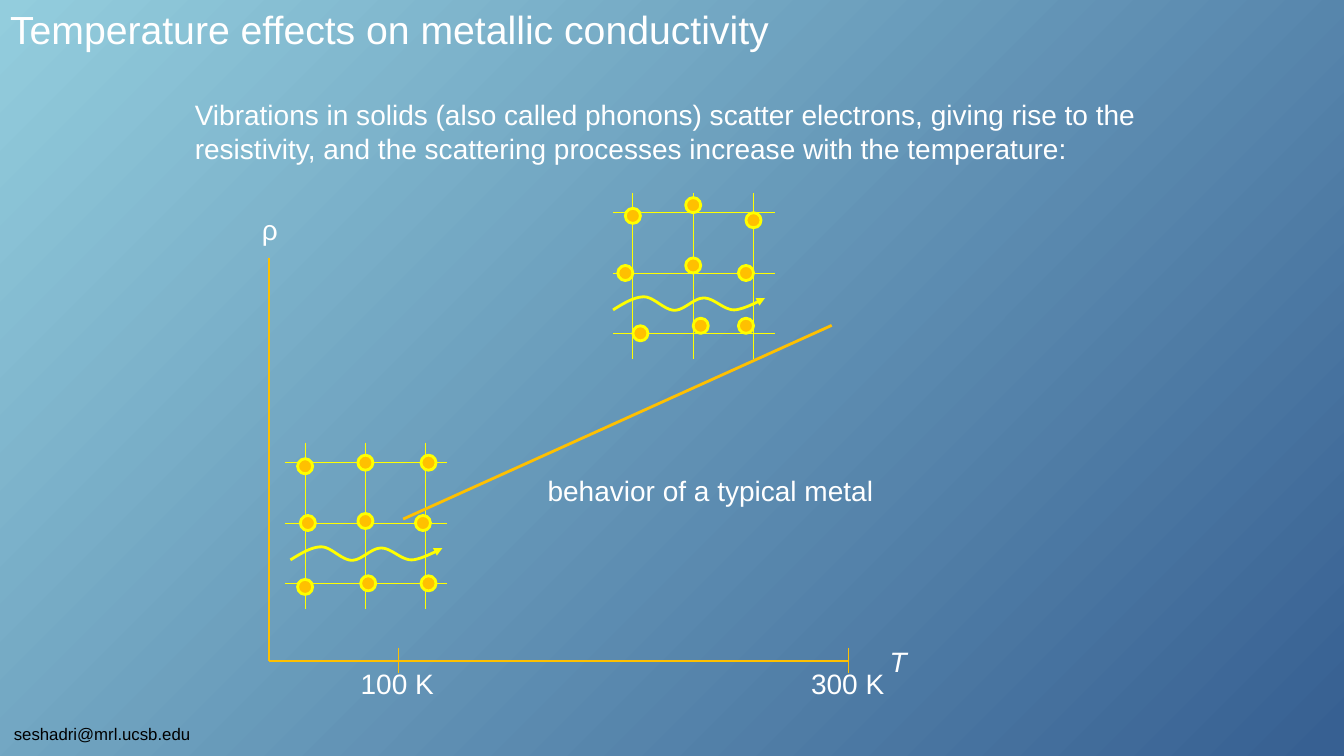
"""Build a slide on how temperature affects metallic conductivity."""
from dataclasses import dataclass
from itertools import product
from typing import Any

from lxml.etree import SubElement
from pptx import Presentation
from pptx.dml.color import RGBColor as Rgb
from pptx.enum.shapes import MSO_CONNECTOR as Link, MSO_SHAPE as Shape
from pptx.enum.text import MSO_ANCHOR as Anchor, MSO_AUTO_SIZE as Fit, PP_ALIGN as Align
from pptx.oxml.ns import qn
from pptx.util import Cm, Pt

Point = tuple[float, float]


@dataclass(frozen=True)
class Theme:
    font: str = "Arial"
    light: str = "93CDDD"
    deep: str = "376092"
    white: str = "FFFFFF"
    black: str = "000000"
    gold: str = "FFC000"
    yellow: str = "FFFF00"
    title: float = 28
    body: float = 20
    small: float = 12
    thin: float = 0.75
    tick: float = 1
    axis: float = 1.5
    bold: float = 2


@dataclass(frozen=True)
class Label:
    text: str
    left: float
    top: float
    width: float
    height: float = 1.12
    size: float = Theme.body
    color: str = Theme.white
    wrap: bool = False
    slant: bool = False


@dataclass(frozen=True)
class Line:
    start: Point
    end: Point
    width: float
    color: str = Theme.gold


@dataclass(frozen=True)
class Lattice:
    left: float
    top: float
    wave: Point
    shifts: tuple[Point, ...]


THEME = Theme()
PITCH, INSET, WIDE, TALL, DOT = 1.52, 0.5, 4.07, 4.19, 0.38
CURVES: tuple[tuple[Point, ...], ...] = (
    ((0, 0.33), (0.26, 0.17), (0.53, 0), (0.78, 0)),
    ((0.78, 0), (1.03, 0), (1.29, 0.34), (1.55, 0.34)),
    ((1.55, 0.34), (1.8, 0.34), (2.03, 0.03), (2.29, 0.03)),
    ((2.29, 0.03), (2.54, 0.03), (2.79, 0.33), (3.05, 0.33)),
    ((3.05, 0.33), (3.3, 0.33), (3.83, 0.03), (3.83, 0.03)),
)
STEPS = 12

HEAD = Label("Temperature effects on metallic conductivity", 0, 0, 33.87, 1.45,
             THEME.title, wrap=True)
LABELS = (
    Label("seshadri@mrl.ucsb.edu", 0.1, 18.1, 5.2, 0.77, THEME.small, THEME.black),
    Label("Vibrations in solids (also called phonons) scatter electrons, giving rise to the "
          "resistivity, and the scattering processes increase with the temperature:",
          4.66, 2.34, 24.56, 1.96, wrap=True),
    Label("300 K", 20.19, 16.66, 2.39),
    Label("100 K", 8.84, 16.66, 2.39),
    Label("T", 22.17, 16.12, 0.91, slant=True),
    Label("ρ", 6.35, 5.23, 0.91),
    Label("behavior of a typical metal", 13.55, 11.81, 9.04),
)
LINES = (
    Line((6.78, 6.5), (6.78, 16.66), THEME.axis),
    Line((6.78, 16.66), (21.39, 16.66), THEME.axis),
    Line((20.96, 8.2), (10.16, 13.08), THEME.bold),
    Line((21.39, 16.32), (21.39, 16.96), THEME.tick),
    Line((10.04, 16.32), (10.04, 16.96), THEME.tick),
)
LATTICES = (
    Lattice(7.19, 11.16, (0.13, 2.62),
            ((0, 0.09), (0.07, 0), (0, 0.09), (0, 0), (0, -0.05), (0.07, 0),
             (0.07, 0), (-0.07, 0), (0.07, 0))),
    Lattice(15.45, 4.86, (0, 2.62),
            ((0, 0.08), (-0.19, 0), (0.19, 0), (0, -0.19), (0, -0.19), (0.19, -0.19),
             (0, 0.19), (-0.19, 0), (-0.19, -0.19))),
)


def write(box: Any, item: Label) -> None:
    """Place a text shape and format its words."""
    box.left, box.top = Cm(item.left), Cm(item.top)
    box.width, box.height = Cm(item.width), Cm(item.height)
    frame = box.text_frame
    frame.text = item.text
    frame.word_wrap = item.wrap
    frame.auto_size = Fit.SHAPE_TO_FIT_TEXT
    frame.vertical_anchor = Anchor.TOP
    para = frame.paragraphs[0]
    para.alignment = Align.LEFT
    font = para.runs[0].font
    font.name, font.size, font.italic = THEME.font, Pt(item.size), item.slant
    font.color.rgb = Rgb.from_string(item.color)


def stroke(shape: Any, color: str, width: float) -> None:
    """Set the outline of a shape."""
    shape.line.color.rgb = Rgb.from_string(color)
    shape.line.width = Pt(width)


def rule(shapes: Any, item: Line) -> None:
    """Draw a straight line."""
    line = shapes.add_connector(Link.STRAIGHT, *map(Cm, item.start + item.end))
    stroke(line, item.color, item.width)
    SubElement(line._element.spPr, qn("a:effectLst"))


def atom(shapes: Any, x: float, y: float) -> None:
    """Draw an atom around its centre."""
    dot = shapes.add_shape(Shape.OVAL, Cm(x - DOT / 2), Cm(y - DOT / 2), Cm(DOT), Cm(DOT))
    dot.shadow.inherit = False
    dot.fill.solid()
    dot.fill.fore_color.rgb = Rgb.from_string(THEME.gold)
    stroke(dot, THEME.yellow, THEME.bold)


def bend(curve: tuple[Point, ...], t: float) -> Point:
    """Return the point at t on a cubic curve."""
    parts = ((1 - t) ** 3, 3 * t * (1 - t) ** 2, 3 * t * t * (1 - t), t ** 3)
    return (sum(k * p[0] for k, p in zip(parts, curve)),
            sum(k * p[1] for k, p in zip(parts, curve)))


def wave(shapes: Any, left: float, top: float) -> None:
    """Draw the wavy arrow of a moving electron."""
    points = [CURVES[0][0]] + [bend(curve, step / STEPS)
                               for curve in CURVES for step in range(1, STEPS + 1)]
    spots = [(Cm(left + x), Cm(top + y)) for x, y in points]
    pen = shapes.build_freeform(*spots[0])
    pen.add_line_segments(spots[1:], close=False)
    path = pen.convert_to_shape()
    path.shadow.inherit = False
    path.fill.background()
    stroke(path, THEME.yellow, THEME.bold)
    SubElement(path.line._get_or_add_ln(), qn("a:tailEnd"), type="triangle")


def grid(slide: Any, item: Lattice) -> None:
    """Draw a lattice with its shifted atoms and electron."""
    shapes = slide.shapes.add_group_shape().shapes
    left, top = item.left, item.top
    cols = [left + INSET + PITCH * i for i in range(3)]
    rows = [top + INSET + PITCH * i for i in range(3)]
    for x in cols:
        rule(shapes, Line((x, top), (x, top + TALL), THEME.thin, THEME.yellow))
    for y in rows:
        rule(shapes, Line((left, y), (left + WIDE, y), THEME.thin, THEME.yellow))
    for (x, y), (dx, dy) in zip(product(cols, rows), item.shifts):
        atom(shapes, x + dx, y + dy)
    wave(shapes, left + item.wave[0], top + item.wave[1])


def main() -> None:
    """Build and save the slide."""
    deck = Presentation()
    deck.slide_width, deck.slide_height = Cm(33.87), Cm(19.05)
    slide = deck.slides.add_slide(deck.slide_layouts[5])
    fill = slide.background.fill
    fill.gradient()
    fill.gradient_angle = 315
    for stop, color, place in zip(fill.gradient_stops, (THEME.light, THEME.deep), (0, 0.99)):
        stop.color.rgb, stop.position = Rgb.from_string(color), place
    write(slide.shapes.title, HEAD)
    for item in LATTICES:
        grid(slide, item)
    for item in LINES:
        rule(slide.shapes, item)
    for item in LABELS:
        write(slide.shapes.add_textbox(0, 0, 0, 0), item)
    deck.save("out.pptx")


if __name__ == "__main__":
    main()
